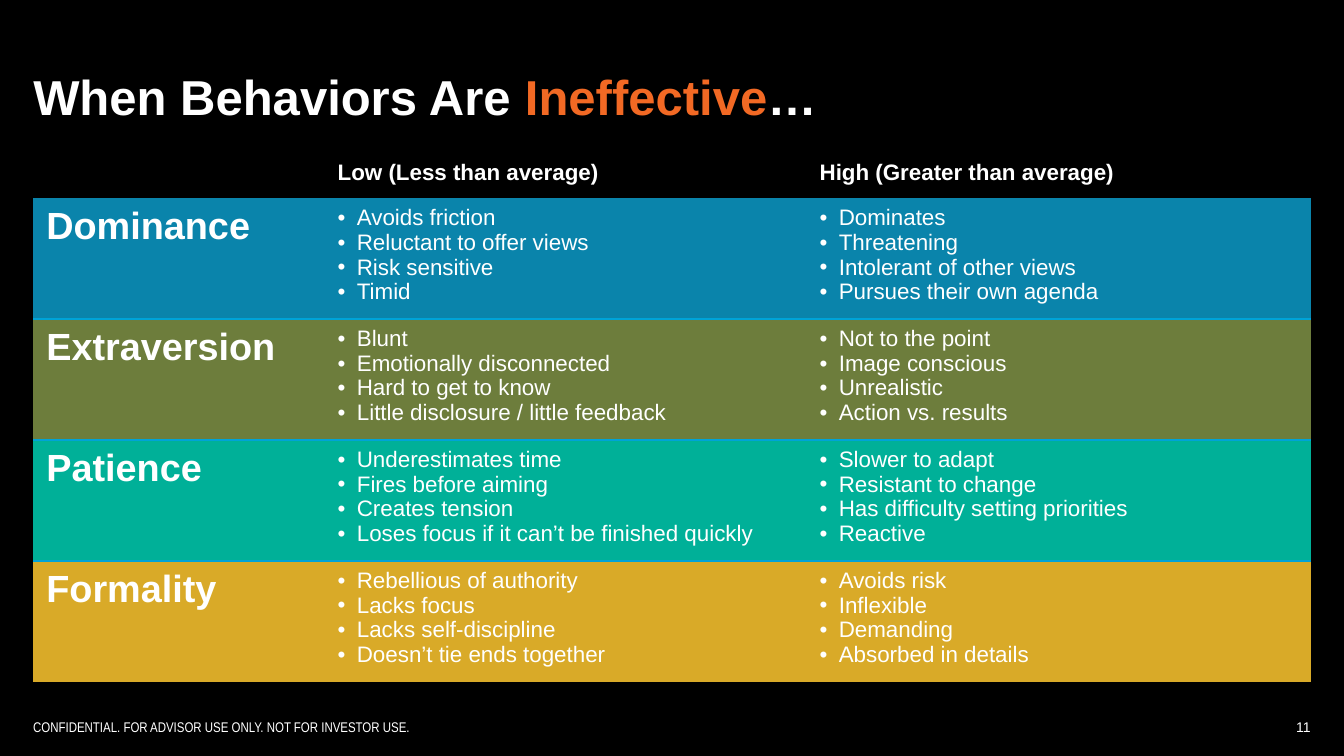
from lxml import etree
from pptx import Presentation, util as u
from pptx.dml.color import RGBColor
from pptx.enum import text
from pptx.oxml import ns

WIDTH, HEIGHT = u.Inches(13.33), u.Inches(7.5)
MARGIN = u.Inches(0.33)
CONTENT_WIDTH = u.Inches(12.67)
COLUMN_WIDTHS = [2.89, 4.78, 5]
HEADER_HEIGHT, ROW_HEIGHT = 0.41, 1.2
PLAIN_TABLE_STYLE = "{2D5ABB26-0587-4C30-8999-92F81FD0307C}"

BLACK = RGBColor(0x00, 0x00, 0x00)
WHITE = RGBColor(0xFF, 0xFF, 0xFF)
ORANGE = RGBColor(0xF2, 0x69, 0x24)
RULE_BLUE = RGBColor(0x00, 0xA3, 0xD7)
BLUE = RGBColor(0x0A, 0x84, 0xAB)
OLIVE = RGBColor(0x6D, 0x7D, 0x3C)
TEAL = RGBColor(0x00, 0xB0, 0x98)
GOLD = RGBColor(0xD9, 0xAA, 0x28)

HEADERS = ["", "Low (Less than average)", "High (Greater than average)"]
BEHAVIORS = [
    ("Dominance", BLUE,
     ["Avoids friction", "Reluctant to offer views", "Risk sensitive", "Timid"],
     ["Dominates", "Threatening", "Intolerant of other views", "Pursues their own agenda"]),
    ("Extraversion", OLIVE,
     ["Blunt", "Emotionally disconnected", "Hard to get to know",
      "Little disclosure / little feedback"],
     ["Not to the point", "Image conscious", "Unrealistic", "Action vs. results"]),
    ("Patience", TEAL,
     ["Underestimates time", "Fires before aiming", "Creates tension",
      "Loses focus if it can’t be finished quickly"],
     ["Slower to adapt", "Resistant to change", "Has difficulty setting priorities",
      "Reactive"]),
    ("Formality", GOLD,
     ["Rebellious of authority", "Lacks focus", "Lacks self-discipline",
      "Doesn’t tie ends together"],
     ["Avoids risk", "Inflexible", "Demanding", "Absorbed in details"]),
]


def format_run(run, size, bold=False, color=WHITE, name="Arial"):
    run.font.size = u.Pt(size)
    run.font.bold = bold
    run.font.name = name
    run.font.color.rgb = color


def anchor_to_bottom(frame):
    """Remove the insets and rest the text on the lower edge."""
    frame.margin_left = frame.margin_right = frame.margin_top = frame.margin_bottom = 0
    frame.word_wrap = True
    frame.auto_size = text.MSO_AUTO_SIZE.NONE
    frame.vertical_anchor = text.MSO_ANCHOR.BOTTOM


def format_title(title):
    title.left, title.top = MARGIN, MARGIN
    title.width, title.height = CONTENT_WIDTH, u.Inches(0.91)
    anchor_to_bottom(title.text_frame)
    paragraph = title.text_frame.paragraphs[0]
    paragraph.alignment = text.PP_ALIGN.LEFT
    paragraph.line_spacing = u.Pt(32)
    for words, color in [("When Behaviors Are ", WHITE), ("Ineffective", ORANGE), ("…", WHITE)]:
        run = paragraph.add_run()
        run.text = words
        format_run(run, 35, True, color)


def add_footer(slide, words, left, width, alignment, name):
    height = u.Inches(0.2)
    box = slide.shapes.add_textbox(left, u.Inches(7.3) - height, width, height)
    box.text_frame.text = words
    anchor_to_bottom(box.text_frame)
    paragraph = box.text_frame.paragraphs[0]
    paragraph.alignment = alignment
    format_run(paragraph.runs[0], 10, name=name)


def add_bullet(paragraph):
    properties = paragraph._p.get_or_add_pPr()
    indent = u.Inches(0.19)
    properties.set("marL", str(indent))
    properties.set("indent", str(-indent))
    etree.SubElement(properties, ns.qn("a:buFont")).set("typeface", "Arial")
    etree.SubElement(properties, ns.qn("a:buChar")).set("char", "•")


def add_bottom_rule(cell):
    line = etree.Element(ns.qn("a:lnB"), w=str(u.Pt(2.25)))
    fill = etree.SubElement(line, ns.qn("a:solidFill"))
    etree.SubElement(fill, ns.qn("a:srgbClr")).set("val", str(RULE_BLUE))
    cell._tc.get_or_add_tcPr().insert(0, line)


def fill_cell(cell, lines, size, bold=False, color=None, bulleted=False):
    cell.margin_left = cell.margin_right = u.Inches(0.13)
    cell.margin_top = cell.margin_bottom = u.Inches(0.07)
    if color is None:
        cell.fill.background()
    else:
        cell.fill.solid()
        cell.fill.fore_color.rgb = color
    cell.text_frame.text = "\n".join(lines)
    for paragraph in cell.text_frame.paragraphs:
        if bulleted:
            add_bullet(paragraph)
        for run in paragraph.runs:
            format_run(run, size, bold)


def add_behavior_table(slide):
    height = HEADER_HEIGHT + ROW_HEIGHT * len(BEHAVIORS)
    frame = slide.shapes.add_table(len(BEHAVIORS) + 1, len(HEADERS), MARGIN, u.Inches(1.52),
                                   CONTENT_WIDTH, u.Inches(height))
    table = frame.table
    table.horz_banding = False
    table._tbl.tblPr.find(ns.qn("a:tableStyleId")).text = PLAIN_TABLE_STYLE
    for column, width in zip(table.columns, COLUMN_WIDTHS):
        column.width = u.Inches(width)
    for index, row in enumerate(table.rows):
        row.height = u.Inches(ROW_HEIGHT if index else HEADER_HEIGHT)
    for cell, header in zip(table.rows[0].cells, HEADERS):
        fill_cell(cell, [header], 16, True)
    for index, (behavior, color, low, high) in enumerate(BEHAVIORS, 1):
        name_cell, low_cell, high_cell = cells = list(table.rows[index].cells)
        fill_cell(name_cell, [behavior], 27, True, color)
        fill_cell(low_cell, low, 16, color=color, bulleted=True)
        fill_cell(high_cell, high, 16, color=color, bulleted=True)
        if index < len(BEHAVIORS):
            for cell in cells:
                add_bottom_rule(cell)


def main():
    presentation = Presentation()
    presentation.slide_width, presentation.slide_height = WIDTH, HEIGHT
    slide = presentation.slides.add_slide(presentation.slide_layouts[5])
    slide.background.fill.solid()
    slide.background.fill.fore_color.rgb = BLACK
    format_title(slide.shapes.title)
    add_behavior_table(slide)
    add_footer(slide, "CONFIDENTIAL. FOR ADVISOR USE ONLY. NOT FOR INVESTOR USE.",
               MARGIN, u.Inches(11), text.PP_ALIGN.LEFT, "Arial Narrow")
    add_footer(slide, "11", u.Inches(12.25), u.Inches(0.75), text.PP_ALIGN.RIGHT, "Arial")
    presentation.save("out.pptx")


if __name__ == "__main__":
    main()
